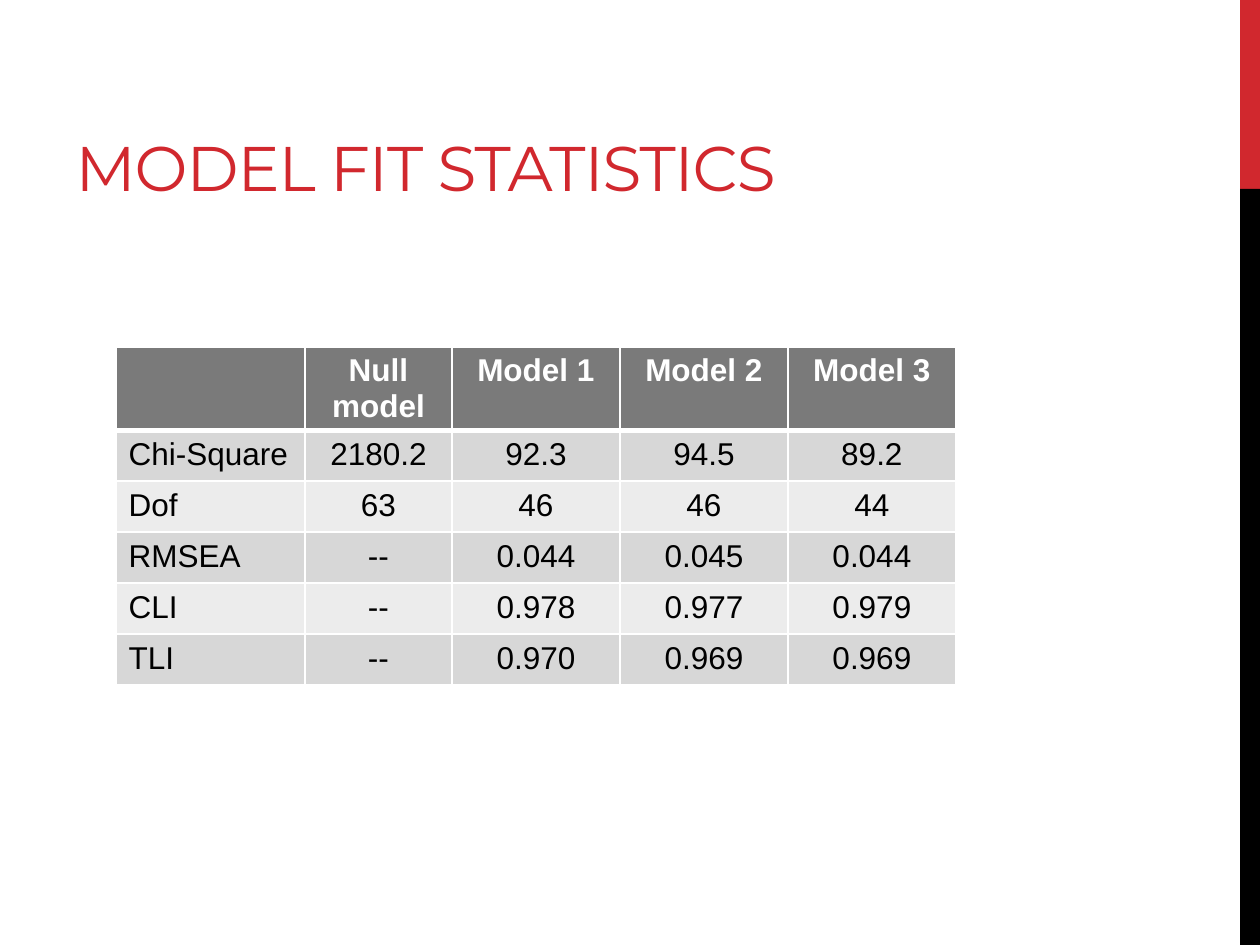
from lxml.etree import SubElement
from pptx import Presentation
from pptx.dml.color import RGBColor
from pptx.enum.shapes import MSO_SHAPE
from pptx.enum.text import MSO_ANCHOR, MSO_AUTO_SIZE, PP_ALIGN
from pptx.oxml.ns import qn
from pptx.util import Emu, Pt

SCALE = 914400 / 126
HUES = {
    "red": "D1282E", "black": "000000", "white": "FFFFFF",
    "head": "7A7A7A", "odd": "D7D7D7", "even": "ECECEC",
}
ROWS = [
    ["", "Null model", "Model 1", "Model 2", "Model 3"],
    ["Chi-Square", "2180.2", "92.3", "94.5", "89.2"],
    ["Dof", "63", "46", "46", "44"],
    ["RMSEA", "--", "0.044", "0.045", "0.044"],
    ["CLI", "--", "0.978", "0.977", "0.979"],
    ["TLI", "--", "0.970", "0.969", "0.969"],
]
WIDTHS = [189, 147, 168, 168, 168]
ROW_H = 51


def px(*vals):
    """Turn pixel lengths into EMU."""
    return [Emu(round(val * SCALE)) for val in vals]


def hue(name):
    """Look up a named colour."""
    return RGBColor.from_string(HUES[name])


def write(frame, text, size=18, font="Arial", color="black", bold=False,
          align=PP_ALIGN.LEFT, space=None):
    """Write one formatted paragraph into a text frame."""
    para = frame.paragraphs[0]
    para.alignment = align
    run = para.add_run()
    run.text = text
    run.font.size = Pt(size)
    run.font.name = font
    run.font.bold = bold
    run.font.color.rgb = hue(color)
    if space is not None:
        run.font._element.set("spc", str(space))


def add_title(slide, text):
    """Place and format the title."""
    title = slide.shapes.title
    title.left, title.top, title.width, title.height = px(63, 21, 798, 189)
    frame = title.text_frame
    frame.word_wrap = True
    frame.auto_size = MSO_AUTO_SIZE.NONE
    frame.vertical_anchor = MSO_ANCHOR.BOTTOM
    write(frame, text, size=36, font="Montserrat", color="red", space=-60)


def add_bar(slide, top, height, color):
    """Draw a block of the side stripe."""
    bar = slide.shapes.add_shape(
        MSO_SHAPE.RECTANGLE, *px(1240, top, 20, height))
    bar.shadow.inherit = False
    bar.fill.solid()
    bar.fill.fore_color.rgb = hue(color)
    bar.line.fill.background()


def edge(cell, top, bottom):
    """Give a cell white borders, with top and bottom widths in points."""
    props = cell._tc.get_or_add_tcPr()
    for side, width in zip("LRTB", (1, 1, top, bottom)):
        line = SubElement(props, qn(f"a:ln{side}"), w=str(Pt(width)))
        fill = SubElement(line, qn("a:solidFill"))
        SubElement(fill, qn("a:srgbClr"), val=HUES["white"])


def add_grid(slide, rows):
    """Build the table of fit statistics."""
    table = slide.shapes.add_table(
        len(rows), len(WIDTHS),
        *px(116, 347, sum(WIDTHS), ROW_H * len(rows))).table
    for col, width in zip(table.columns, px(*WIDTHS)):
        col.width = width
    for i, row in enumerate(rows):
        table.rows[i].height = px(ROW_H)[0]
        head = i == 0
        shade = "head" if head else "odd" if i % 2 else "even"
        for j, text in enumerate(row):
            cell = table.cell(i, j)
            edge(cell, 3 if i == 1 else 1, 3 if head else 1)
            cell.fill.solid()
            cell.fill.fore_color.rgb = hue(shade)
            if text:
                write(cell.text_frame, text, bold=head,
                      color="white" if head else "black",
                      align=PP_ALIGN.CENTER if j else PP_ALIGN.LEFT)


def main():
    """Build and save the slide."""
    deck = Presentation()
    deck.slide_width, deck.slide_height = px(1260, 945)
    slide = deck.slides.add_slide(deck.slide_layouts[5])
    add_bar(slide, 0, 189, "red")
    add_bar(slide, 189, 756, "black")
    add_title(slide, "MODEL FIT STATISTICS")
    add_grid(slide, ROWS)
    deck.save("out.pptx")


if __name__ == "__main__":
    main()
